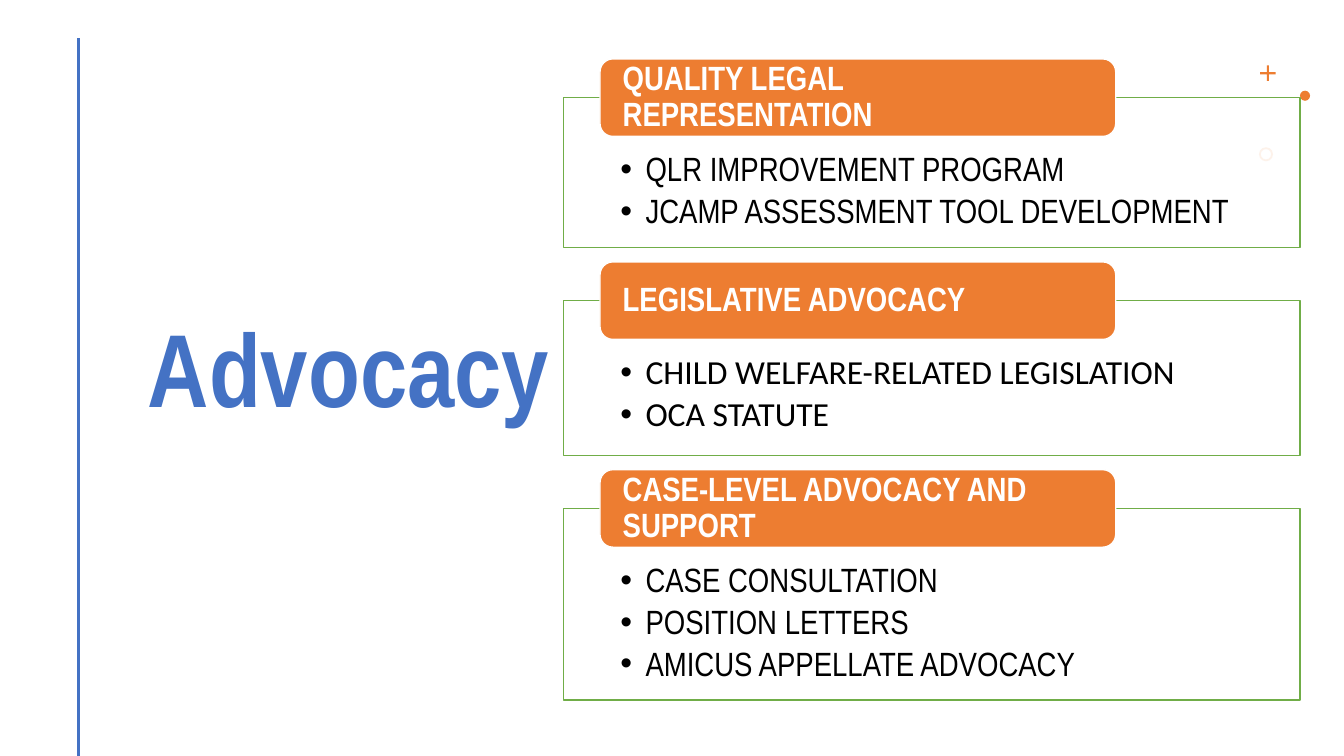
"""Build the advocacy slide with its three titled panels."""
from lxml.etree import SubElement
from pptx import Presentation
from pptx.dml.color import RGBColor
from pptx.enum.shapes import MSO_CONNECTOR, MSO_SHAPE
from pptx.enum.text import MSO_ANCHOR, PP_ALIGN
from pptx.oxml.ns import qn
from pptx.util import Pt

BLUE, ORANGE, GREEN = "4472C4", "ED7D31", "70AD47"
WHITE, BLACK = "FFFFFF", "000000"
NARROW = "Arial Narrow"
PANELS = [
    ("QUALITY LEGAL REPRESENTATION", 107.2, NARROW,
     ["QLR IMPROVEMENT PROGRAM", "JCAMP ASSESSMENT TOOL DEVELOPMENT"]),
    ("LEGISLATIVE ADVOCACY", 110.6, "Calibri",
     ["CHILD WELFARE-RELATED LEGISLATION", "OCA STATUTE"]),
    ("CASE-LEVEL ADVOCACY AND SUPPORT", 137, NARROW,
     ["CASE CONSULTATION", "POSITION LETTERS", "AMICUS APPELLATE ADVOCACY"]),
]


def color(code):
    return RGBColor.from_string(code)


class Deck:
    def __init__(self):
        self.show = Presentation()
        self.show.slide_width, self.show.slide_height = Pt(960), Pt(540)
        self.slide = self.show.slides.add_slide(self.show.slide_layouts[6])

    def shape(self, kind, box, fill, line=None, adjust=None):
        item = self.slide.shapes.add_shape(kind, *map(Pt, box))
        item.shadow.inherit = False
        item.fill.solid()
        item.fill.fore_color.rgb = color(fill)
        if line:
            item.line.color.rgb = color(line)
            item.line.width = Pt(1)
        else:
            item.line.fill.background()
        if adjust is not None:
            item.adjustments[0] = adjust
        return item

    def rule(self, x, top, end):
        item = self.slide.shapes.add_connector(
            MSO_CONNECTOR.STRAIGHT, Pt(x), Pt(top), Pt(x), Pt(end))
        item.line.color.rgb = color(BLUE)
        item.line.width = Pt(2)
        SubElement(item._element.spPr, qn("a:effectLst"))

    def label(self, item, lines, size, font, ink, pads, bold=False,
              anchor=MSO_ANCHOR.MIDDLE, bullet=False):
        frame = item.text_frame
        frame.word_wrap = True
        frame.vertical_anchor = anchor
        (frame.margin_left, frame.margin_top,
         frame.margin_right, frame.margin_bottom) = map(Pt, pads)
        frame.text = "\n".join(lines)
        for para in frame.paragraphs:
            para.alignment = PP_ALIGN.LEFT
            para.line_spacing = 0.9
            if bullet:
                para.space_after = Pt(4)
                props = para._p.get_or_add_pPr()
                props.set("marL", str(Pt(18)))
                props.set("indent", str(-Pt(18)))
                SubElement(props, qn("a:buFont"), typeface="Arial")
                SubElement(props, qn("a:buChar"), char="•")
            for run in para.runs:
                run.font.name, run.font.size = font, Pt(size)
                run.font.bold = bold
                run.font.color.rgb = color(ink)

    def title(self, text, box):
        item = self.slide.shapes.add_textbox(*map(Pt, box))
        self.label(item, [text], 74, NARROW, BLUE, (7.2, 3.6, 7.2, 3.6), True)

    def panel(self, top, head, height, font, lines):
        body = self.shape(MSO_SHAPE.RECTANGLE, (402.3, top, 526.3, height),
                          WHITE, GREEN)
        tint = body._element.spPr.find(qn("a:solidFill"))[0]
        SubElement(tint, qn("a:alpha"), val="90000")
        self.label(body, lines, 24, font, BLACK, (40.8, 39.4, 40.8, 13.5),
                   anchor=MSO_ANCHOR.TOP, bullet=True)
        tab = self.shape(MSO_SHAPE.ROUNDED_RECTANGLE,
                         (428.6, top - 27.6, 368.4, 55.4), ORANGE, WHITE)
        self.label(tab, [head], 24, NARROW, WHITE, (13.5, 0, 13.5, 0), True)


def main():
    deck = Deck()
    deck.title("Advocacy", (98.6, 46.8, 310.3, 439.9))
    deck.rule(56.2, 27.4, 540)
    deck.shape(MSO_SHAPE.CROSS, (900.2, 46.8, 11, 11), ORANGE, adjust=0.43)
    deck.shape(MSO_SHAPE.OVAL, (928.6, 64.8, 7.2, 7.2), ORANGE)
    deck.shape(MSO_SHAPE.DONUT, (899.3, 105.2, 10, 10), ORANGE, adjust=0.13)
    top = 69.7
    for head, height, font, lines in PANELS:
        deck.panel(top, head, height, font, lines)
        top += height + 37.8
    deck.show.save("out.pptx")


if __name__ == "__main__":
    main()
